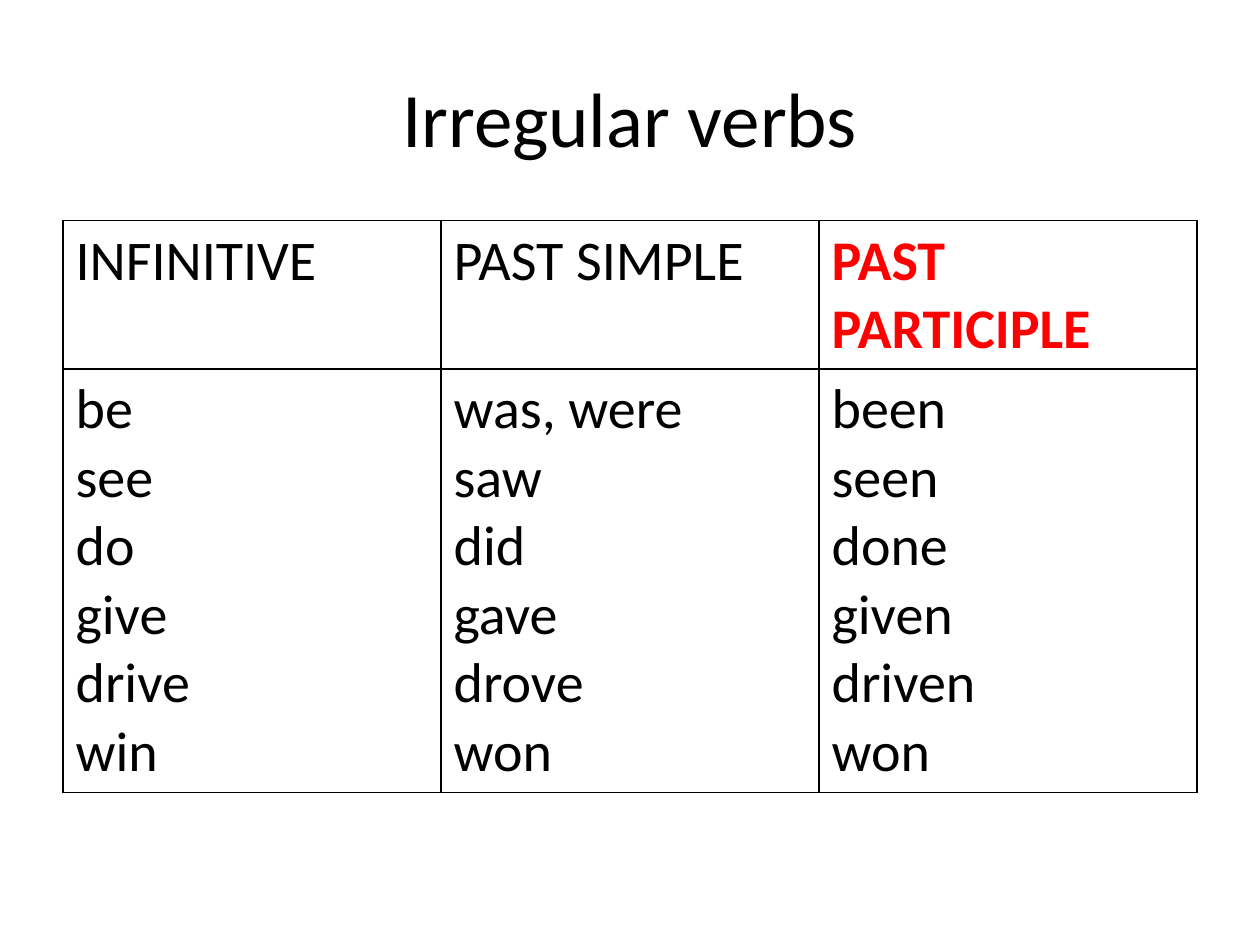
from dataclasses import dataclass

from lxml import etree
from pptx import Presentation
from pptx import util as u
from pptx.dml.color import RGBColor
from pptx.enum import text
from pptx.oxml import ns


@dataclass(frozen=True)
class Theme:
    font: str = "Calibri"
    title_size: int = 44
    table_size: int = 32
    ink: str = "000000"
    accent: str = "FF0000"
    border_width: int = 1


@dataclass(frozen=True)
class VerbColumn:
    heading: str
    forms: tuple[str, ...]
    highlighted: bool = False


THEME = Theme()
COLUMNS = (
    VerbColumn("INFINITIVE", ("be", "see", "do", "give", "drive", "win")),
    VerbColumn("PAST SIMPLE", ("was, were", "saw", "did", "gave", "drove", "won")),
    VerbColumn("PAST PARTICIPLE", ("been", "seen", "done", "given", "driven", "won"), True),
)
LEFT, WIDTH = u.Inches(0.5), u.Inches(9)
ROW_HEIGHTS = (u.Inches(1.18), u.Inches(3.36))


def write(text_frame, content: str, size: int, color: str, bold: bool = False) -> None:
    """Fill a text frame, one paragraph per line of content."""
    text_frame.text = content
    for paragraph in text_frame.paragraphs:
        for run in paragraph.runs:
            run.font.name = THEME.font
            run.font.size = u.Pt(size)
            run.font.bold = bold
            run.font.color.rgb = RGBColor.from_string(color)


def add_borders(cell) -> None:
    """Draw a solid line on all four sides of a cell."""
    properties = cell._tc.get_or_add_tcPr()
    for position, side in enumerate(("lnL", "lnR", "lnT", "lnB")):
        line = etree.Element(ns.qn(f"a:{side}"), w=str(u.Pt(THEME.border_width)))
        fill = etree.SubElement(line, ns.qn("a:solidFill"))
        etree.SubElement(fill, ns.qn("a:srgbClr"), val=THEME.ink)
        properties.insert(position, line)


def add_title(slide, content: str) -> None:
    shape = slide.shapes.add_textbox(LEFT, u.Inches(0.3), WIDTH, u.Inches(1.25))
    text_frame = shape.text_frame
    text_frame.word_wrap = True
    text_frame.vertical_anchor = text.MSO_ANCHOR.MIDDLE
    write(text_frame, content, THEME.title_size, THEME.ink)
    text_frame.paragraphs[0].alignment = text.PP_ALIGN.CENTER


def add_verb_table(slide, columns: tuple[VerbColumn, ...]) -> None:
    table = slide.shapes.add_table(
        len(ROW_HEIGHTS), len(columns), LEFT, u.Inches(1.75), WIDTH, sum(ROW_HEIGHTS)
    ).table
    table.first_row = table.horz_banding = False
    for row, height in zip(table.rows, ROW_HEIGHTS):
        row.height = height

    for index, column in enumerate(columns):
        heading, body = table.cell(0, index), table.cell(1, index)
        heading_color = THEME.accent if column.highlighted else THEME.ink
        write(heading.text_frame, column.heading, THEME.table_size, heading_color, column.highlighted)
        write(body.text_frame, "\n".join(column.forms), THEME.table_size, THEME.ink)
        for cell in (heading, body):
            cell.fill.background()
            add_borders(cell)


def main() -> None:
    presentation = Presentation()
    presentation.slide_width = u.Inches(10)
    presentation.slide_height = u.Inches(7.5)
    slide = presentation.slides.add_slide(presentation.slide_layouts[6])

    # Title
    add_title(slide, "Irregular verbs")

    # Verb forms
    add_verb_table(slide, COLUMNS)

    presentation.save("out.pptx")


if __name__ == "__main__":
    main()
